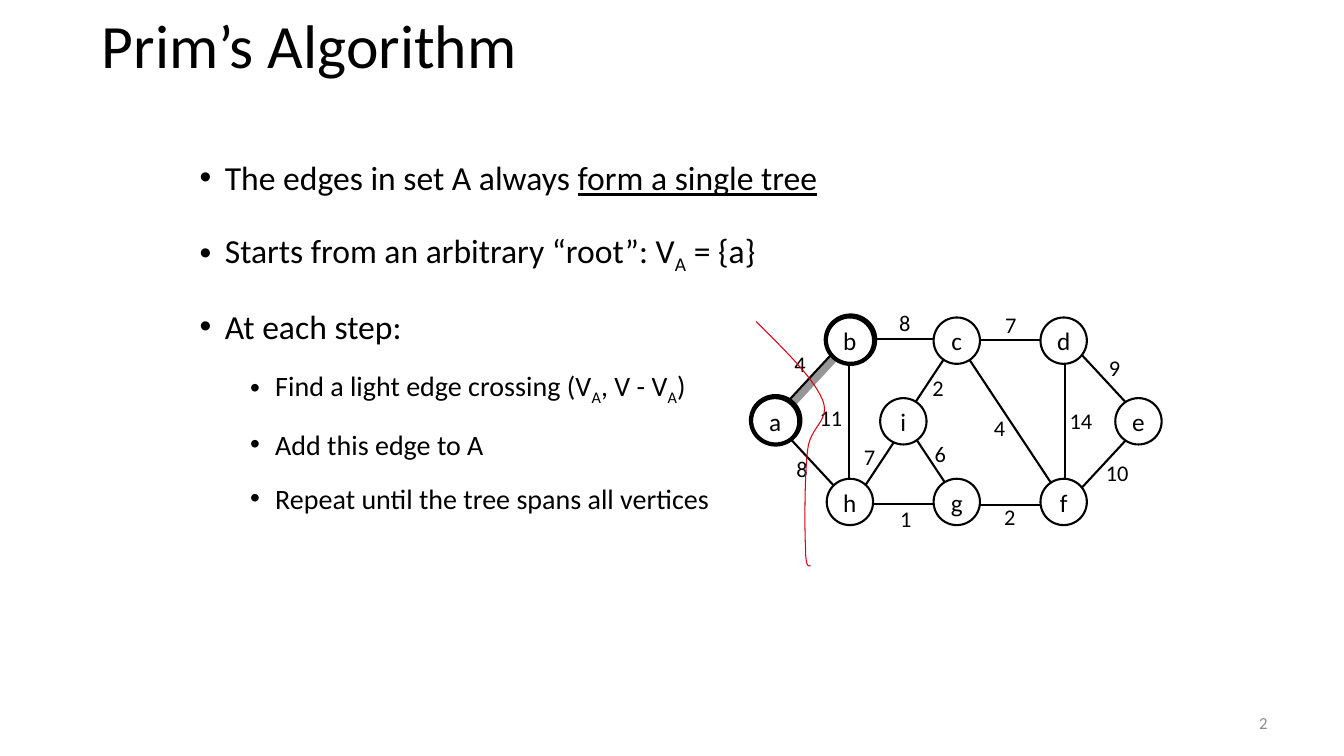
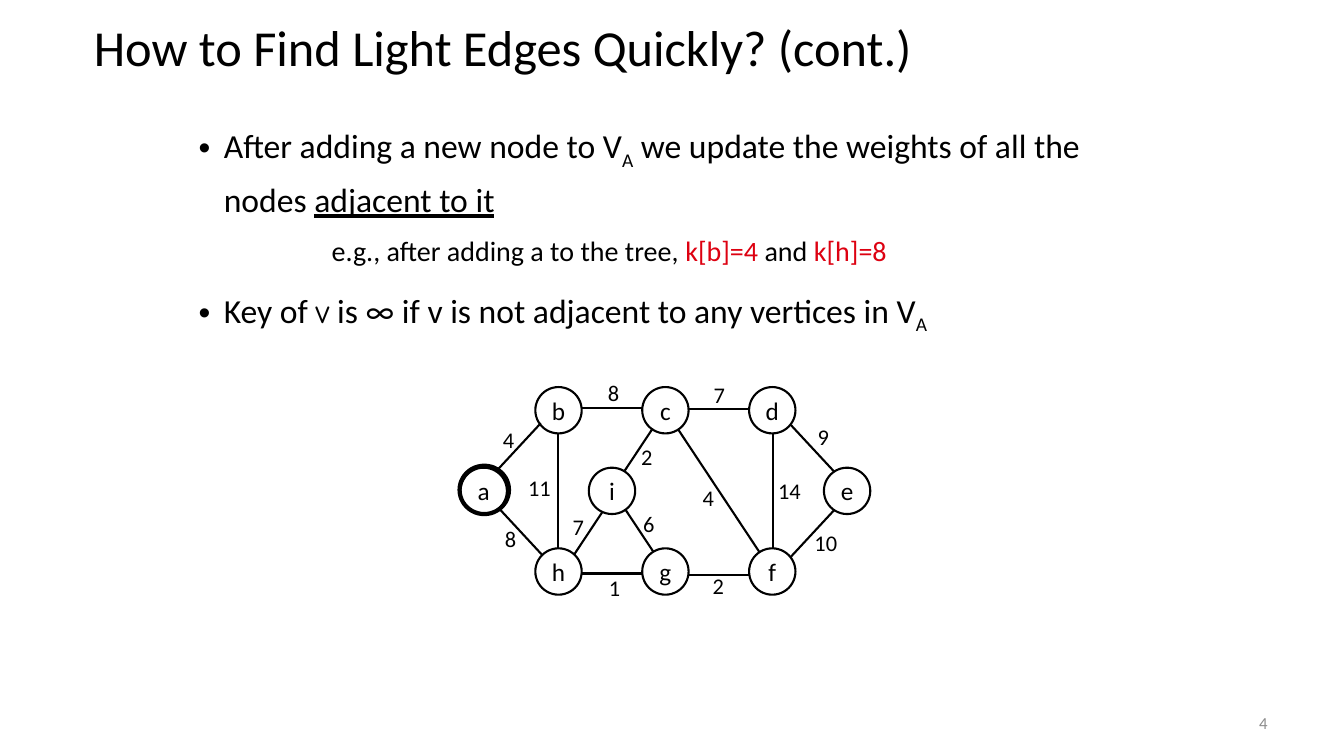
from math import hypot

from lxml.etree import SubElement
from pptx import Presentation
from pptx.dml.color import RGBColor
from pptx.enum.shapes import MSO_CONNECTOR, MSO_SHAPE
from pptx.enum.text import MSO_ANCHOR, MSO_AUTO_SIZE, PP_ALIGN
from pptx.oxml.ns import qn
from pptx.util import Inches, Pt

# Shared style; the slide grid has cells of one inch
COLUMNS, ROWS = 13.33, 7.5
FONT = "Calibri"
BLACK, GREY, BAND, RED = "000000", "8C8C8C", "969696", "DD0111"

# Graph: nodes as (half column, row) counted from node b
HALF_COLUMN, ROW_STEP, NODE_SIZE = 0.53, 0.8, 0.46
NODES = {
    "a": (-1.4, 1), "b": (0, 0), "c": (2, 0), "d": (4, 0), "e": (5.4, 1),
    "h": (0, 2), "g": (2, 2), "f": (4, 2), "i": (1, 1),
}
# Edges: ends, weight, place of the weight from node b, shift of the line
EDGES = [
    ("bh", "11", (-0.17, 0.81), (-0.01, 0)),
    ("df", "14", (2.31, 0.84), (0.01, 0)),
    ("bc", "8", (0.62, -0.13), (0, -0.02)),
    ("cd", "7", (1.67, -0.11), (0, -0.01)),
    ("hg", "1", (0.63, 1.81), (0, 0.02)),
    ("gf", "2", (1.66, 1.79), (0, 0.03)),
    ("ab", "4", (-0.42, 0.34), (-0.02, -0.04)),
    ("fe", "10", (2.67, 1.36), (0.03, 0.02)),
    ("de", "9", (2.7, 0.31), (0.03, -0.02)),
    ("ah", "8", (-0.4, 1.32), (-0.01, 0)),
    ("cf", "4", (1.56, 0.91), (0, 0)),
    ("ig", "6", (0.97, 1.17), (0.01, 0)),
    ("hi", "7", (0.27, 1.2), (0.03, 0.02)),
    ("ic", "2", (0.95, 0.51), (0, -0.01)),
]

# Run formats
PLAIN, UNDERLINED, SUBSCRIPT = {}, {"underline": True}, {"baseline": -25000}
MARKED, COMIC = {"color": RED}, {"name": "Comic Neue"}

# List levels: level, size, space before, left margin, hanging indent, bullet
TOP = dict(level=0, size=24, before=10, margin=0.25, hang=-0.25, bullet="•")
SUB = dict(level=1, size=20, before=5, margin=0.75, hang=-0.25, bullet="•")
EXAMPLE = dict(SUB, margin=1.32, hang=0, bullet=None)

# Cut through the graph: start, then cubic segments
CUT_START = (7.5, 3.19)
CUT_SEGMENTS = [
    ((7.78, 3.47), (8.07, 3.75), (8.16, 3.97)),
    ((8.24, 4.18), (8.03, 4.23), (8.01, 4.47)),
    ((7.98, 4.72), (7.98, 5.25), (7.99, 5.44)),
    ((7.99, 5.63), (8.02, 5.62), (8.04, 5.61)),
]


def rgb(hex_color):
    return RGBColor.from_string(hex_color)


def curve_points(start, segments, steps=12):
    """Points along a chain of cubic curves."""
    points = [start]
    for first, second, end in segments:
        for step in range(1, steps + 1):
            t = step / steps
            shares = ((1 - t) ** 3, 3 * t * (1 - t) ** 2, 3 * t * t * (1 - t), t ** 3)
            corners = (start, first, second, end)
            points.append(tuple(
                sum(share * corner[axis] for share, corner in zip(shares, corners))
                for axis in (0, 1)))
        start = end
    return points


class Deck:
    def __init__(self):
        self.presentation = Presentation()
        self.presentation.slide_width = Inches(COLUMNS)
        self.presentation.slide_height = Inches(ROWS)
        self.slide = None

    def cells(self, *lengths):
        """Grid columns and rows as slide lengths."""
        return [round(self.presentation.slide_width * n / COLUMNS) for n in lengths]

    def style_run(self, run, size, changes=PLAIN):
        style = {"name": FONT, "size": Pt(size), "color": BLACK, **changes}
        for key, value in style.items():
            if key == "color":
                run.font.color.rgb = rgb(value)
            elif key == "baseline":
                run._r.get_or_add_rPr().set("baseline", str(value))
            else:
                setattr(run.font, key, value)

    def outline(self, shape, color, width):
        shape.line.color.rgb = rgb(color)
        shape.line.width = Pt(width)

    def place(self, shape, box):
        for side, length in zip(("left", "top", "width", "height"), self.cells(*box)):
            setattr(shape, side, length)

    def add_text(self, shape, text, size, align=PP_ALIGN.LEFT, color=BLACK,
                 **frame_format):
        for key, value in frame_format.items():
            setattr(shape.text_frame, key, value)
        paragraph = shape.text_frame.paragraphs[0]
        paragraph.alignment = align
        run = paragraph.add_run()
        run.text = text
        self.style_run(run, size, {"color": color})
        return paragraph

    def new_slide(self, title, title_size, title_at, number):
        layout = self.presentation.slide_layouts[1]
        self.slide = self.presentation.slides.add_slide(layout)
        heading = self.slide.shapes.title
        self.place(heading, (*title_at, 12, 0.99))
        line = self.add_text(heading, title, title_size, auto_size=MSO_AUTO_SIZE.NONE,
                             vertical_anchor=MSO_ANCHOR.MIDDLE)
        line.line_spacing = 0.9
        page = self.slide.shapes.add_textbox(*self.cells(9.56, 7, 3.11, 0.35))
        self.add_text(page, number, 12, PP_ALIGN.RIGHT, GREY, word_wrap=True,
                      vertical_anchor=MSO_ANCHOR.MIDDLE)

    def points(self, box, line_spacing, items):
        body = self.slide.placeholders[1]
        self.place(body, box)
        frame = body.text_frame
        frame.auto_size = MSO_AUTO_SIZE.NONE
        for index, (kind, runs) in enumerate(items):
            paragraph = frame.add_paragraph() if index else frame.paragraphs[0]
            properties = paragraph._p.get_or_add_pPr()
            properties.set("marL", str(Inches(kind["margin"])))
            properties.set("indent", str(Inches(kind["hang"])))
            if kind["bullet"]:
                SubElement(properties, qn("a:buChar")).set("char", kind["bullet"])
            else:
                SubElement(properties, qn("a:buNone"))
            paragraph_format = {
                "level": kind["level"], "alignment": PP_ALIGN.LEFT,
                "line_spacing": line_spacing,
                "space_before": Pt(kind["before"] if index else 0),
            }
            for key, value in paragraph_format.items():
                setattr(paragraph, key, value)
            for text, changes in runs:
                run = paragraph.add_run()
                run.text = text
                self.style_run(run, kind["size"], changes)

    def line(self, parent, start, end, color=BLACK, width=1.5):
        connector = parent.add_connector(
            MSO_CONNECTOR.STRAIGHT, *self.cells(*start, *end))
        self.outline(connector, color, width)
        SubElement(connector._element.spPr, qn("a:effectLst"))

    def circle(self, parent, box, width):
        circle = parent.add_shape(MSO_SHAPE.OVAL, *self.cells(*box))
        circle.shadow.inherit = False
        circle.fill.background()
        self.outline(circle, BLACK, width)
        return circle

    def curve(self, points, color, width):
        corners = [self.cells(*point) for point in points]
        builder = self.slide.shapes.build_freeform(*corners[0], scale=1.0)
        builder.add_line_segments(corners[1:], close=False)
        cut = builder.convert_to_shape()
        cut.shadow.inherit = False
        cut.fill.background()
        self.outline(cut, color, width)

    def graph(self, left, top, visited, tree_edges=(), lifts=PLAIN):
        """Weighted graph with node b at left, top."""
        group = self.slide.shapes.add_group_shape().shapes
        corners = {name: (left + HALF_COLUMN * column, top + ROW_STEP * row)
                   for name, (column, row) in NODES.items()}

        def rim_to_rim(ends, shift=(0, 0)):
            (x1, y1), (x2, y2) = (corners[name] for name in ends)
            radius = NODE_SIZE / 2
            trim = radius / hypot(x2 - x1, y2 - y1)
            dx, dy = trim * (x2 - x1), trim * (y2 - y1)
            x_shift, y_shift = radius + shift[0], radius + shift[1]
            return ((x1 + dx + x_shift, y1 + dy + y_shift),
                    (x2 - dx + x_shift, y2 - dy + y_shift))

        # Highlighted tree edges lie below everything else
        for ends in tree_edges:
            self.line(group, *rim_to_rim(ends), BAND, 6)

        # Nodes
        for name, corner in corners.items():
            node = self.circle(group, (*corner, NODE_SIZE, NODE_SIZE), 1.5)
            self.add_text(node, name, 18, PP_ALIGN.CENTER, word_wrap=False,
                          vertical_anchor=MSO_ANCHOR.MIDDLE)

        # Edges and weights
        for ends, weight, (x, y), shift in EDGES:
            self.line(group, *rim_to_rim(ends, shift))
            width = 0.21 + 0.11 * len(weight)
            label = group.add_textbox(*self.cells(
                left + x, top + y - lifts.get(ends, 0), width, 0.37))
            self.add_text(label, weight, 16, word_wrap=False)

        # Rings around visited nodes
        for name in visited:
            x, y = corners[name]
            self.circle(group, (x - 0.01, y - 0.02, 0.49, 0.48), 3)


def main():
    deck = Deck()

    # Prim's algorithm
    deck.new_slide("Prim’s Algorithm", 44, (0.91, -0.01), "2")
    deck.points((1.88, 1.35, 8.97, 5.55), 1.4, [
        (TOP, [("The edges in set A always ", PLAIN), ("form a single tree", UNDERLINED)]),
        (TOP, [("Starts from an arbitrary “root”: V", PLAIN), ("A", SUBSCRIPT),
               (" = {a}", PLAIN)]),
        (TOP, [("At each step:", PLAIN)]),
        (SUB, [("Find a light edge crossing (V", PLAIN), ("A", SUBSCRIPT),
               (", V - V", PLAIN), ("A", SUBSCRIPT), (")", PLAIN)]),
        (SUB, [("Add this edge to A", PLAIN)]),
        (SUB, [("Repeat until the tree spans all vertices", PLAIN)]),
    ])
    deck.graph(8.2, 3.15, visited="ba", tree_edges=["ab"], lifts={"ab": 0.07})
    deck.curve(curve_points(CUT_START, CUT_SEGMENTS), RED, 0.75)

    # Updating the keys
    deck.new_slide("How to Find Light Edges Quickly? (cont.)", 36, (0.83, 0), "4")
    deck.points((1.87, 1.1, 9.6, 6.07), 1.2, [
        (TOP, [("After adding a new node to V", PLAIN), ("A", SUBSCRIPT),
               (" we update the weights of all the nodes ", PLAIN),
               ("adjacent to it", UNDERLINED)]),
        (EXAMPLE, [("e.g., after adding a to the tree, ", PLAIN), ("k[b]=4", MARKED),
                   (" and ", PLAIN), ("k[h]=8", MARKED)]),
        (TOP, [("Key of ", PLAIN), ("v", COMIC),
               (" is ∞ if v is not adjacent to any vertices in V", PLAIN),
               ("A", SUBSCRIPT)]),
    ])
    deck.graph(5.31, 3.84, visited="a")

    deck.presentation.save("out.pptx")


if __name__ == "__main__":
    main()
